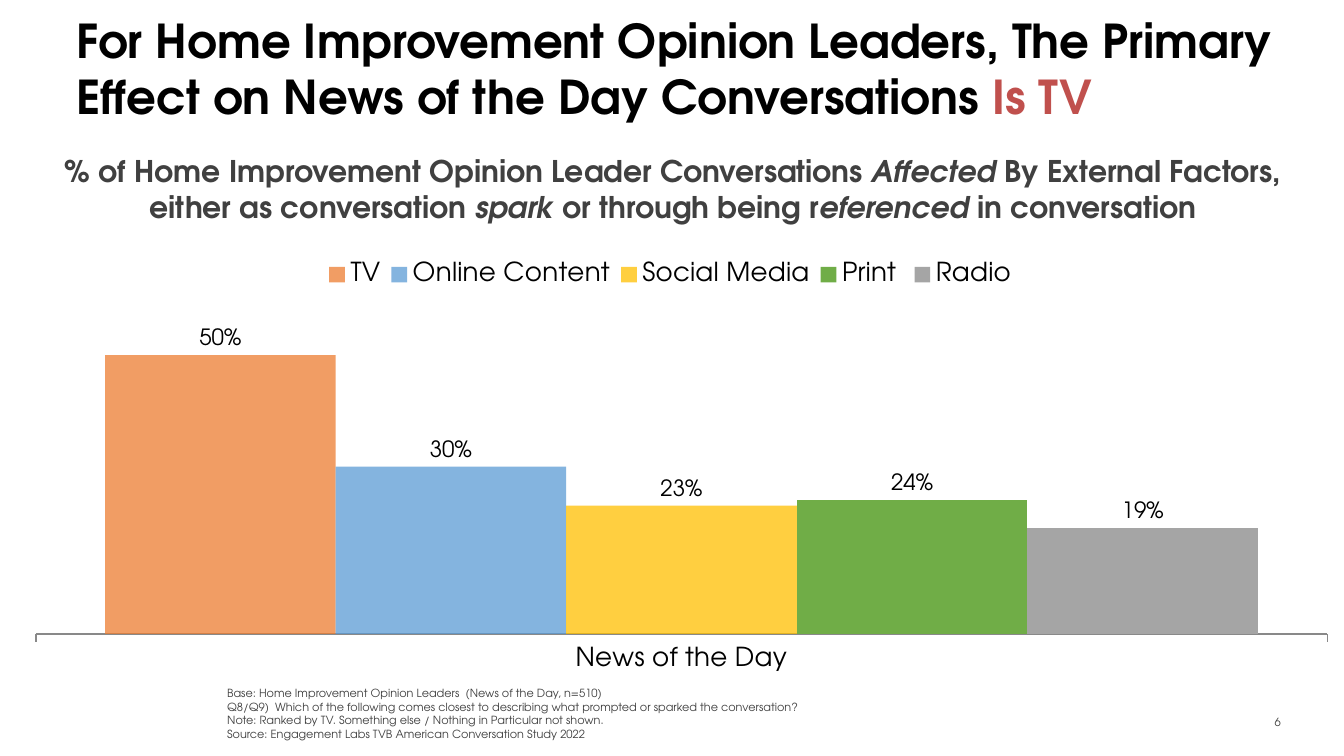
from dataclasses import dataclass, replace
from typing import Optional

from pptx import Presentation
from pptx.chart.data import CategoryChartData
from pptx.dml.color import RGBColor
from pptx.enum.chart import XL_CHART_TYPE as ChartType
from pptx.enum.chart import XL_LABEL_POSITION as LabelPosition
from pptx.enum.chart import XL_LEGEND_POSITION as LegendPosition
from pptx.enum.chart import XL_TICK_MARK as TickMark
from pptx.enum.text import MSO_ANCHOR as Anchor
from pptx.enum.text import MSO_AUTO_SIZE as AutoSize
from pptx.enum.text import PP_ALIGN as Align
from pptx.oxml import parse_xml
from pptx.oxml.ns import nsdecls, qn
from pptx.util import Emu, Pt

FONT = "TeX Gyre Adventor"
BLACK = RGBColor(0x00, 0x00, 0x00)
RED = RGBColor(0xC0, 0x50, 0x4D)
DARK_GREY = RGBColor(0x40, 0x40, 0x40)
PAGE_GREY = RGBColor(0x3C, 0x3C, 0x3A)
AXIS_GREY = RGBColor(0x89, 0x89, 0x89)
ORANGE = RGBColor(0xED, 0x7D, 0x31)
BLUE = RGBColor(0x5B, 0x9B, 0xD5)
YELLOW = RGBColor(0xFF, 0xC0, 0x00)
GREEN = RGBColor(0x70, 0xAD, 0x47)
GREY = RGBColor(0xA5, 0xA5, 0xA5)

EMU_PER_PX = 914400 / 134.4


def px(length: int) -> Emu:
    return Emu(round(length * EMU_PER_PX))


@dataclass(frozen=True)
class Run:
    text: str
    size: int
    color: RGBColor
    bold: bool = False
    italic: bool = False
    break_after: bool = False


@dataclass(frozen=True)
class TextBlock:
    left: int
    top: int
    width: int
    height: int
    paragraphs: list[list[Run]]
    align: Align = Align.LEFT
    anchor: Anchor = Anchor.TOP
    margin_top: int = 7
    wrap: bool = True
    fit: AutoSize = AutoSize.NONE


@dataclass(frozen=True)
class Medium:
    name: str
    share: float
    color: RGBColor
    opacity: Optional[int] = None


def add_text_block(slide, block: TextBlock) -> None:
    box = slide.shapes.add_textbox(
        px(block.left), px(block.top), px(block.width), px(block.height))
    frame = box.text_frame
    frame.word_wrap = block.wrap
    frame.auto_size = block.fit
    frame.vertical_anchor = block.anchor
    frame.margin_top = px(block.margin_top)
    for index, runs in enumerate(block.paragraphs):
        paragraph = frame.add_paragraph() if index else frame.paragraphs[0]
        paragraph.alignment = block.align
        for part in runs:
            run = paragraph.add_run()
            run.text = part.text
            run.font.name = FONT
            run.font.size = Pt(part.size)
            run.font.bold = part.bold
            run.font.italic = part.italic
            run.font.color.rgb = part.color
            if part.break_after:
                paragraph.add_line_break()


def manual_layout(x: float, y: float, w: float, h: float, inner: bool = False):
    target = '<c:layoutTarget val="inner"/>' if inner else ""
    return parse_xml(
        f'<c:layout {nsdecls("c")}><c:manualLayout>{target}'
        '<c:xMode val="edge"/><c:yMode val="edge"/>'
        f'<c:x val="{x}"/><c:y val="{y}"/><c:w val="{w}"/><c:h val="{h}"/>'
        '</c:manualLayout></c:layout>')


def set_layout(parent, index: int, layout) -> None:
    for old in parent.findall(qn("c:layout")):
        parent.remove(old)
    parent.insert(index, layout)


def style_series(series, medium: Medium) -> None:
    fill = series.format.fill
    fill.solid()
    fill.fore_color.rgb = medium.color
    if medium.opacity is not None:
        color = series.format.fill.fore_color
        color_element = next(series._element.iter(qn("a:srgbClr")))
        color_element.append(parse_xml(
            f'<a:alpha {nsdecls("a")} val="{medium.opacity * 1000}"/>'))
    labels = series.data_labels
    labels.show_value = True
    labels.position = LabelPosition.OUTSIDE_END
    labels.number_format = "0%"
    labels.number_format_is_linked = False
    labels.font.size = Pt(12)
    labels.font.name = FONT
    labels.font.color.rgb = BLACK


def add_media_chart(slide, media: list[Medium]) -> None:
    data = CategoryChartData(number_format="0%")
    data.categories = ["News of the Day"]
    for medium in media:
        data.add_series(medium.name, [medium.share])
    chart = slide.shapes.add_chart(
        ChartType.COLUMN_CLUSTERED, px(0), px(220), px(1328), px(476), data).chart
    chart.has_title = False
    chart.font.name = FONT
    chart.font.size = Pt(18)
    chart.font.color.rgb = BLACK

    # Columns
    plot = chart.plots[0]
    plot.gap_width = 60
    plot.overlap = 0
    plot.vary_by_categories = False
    for series, medium in zip(plot.series, media):
        style_series(series, medium)
    plot_area = next(chart._chartSpace.iter(qn("c:plotArea")))
    set_layout(plot_area, 0, manual_layout(0.027, 0.05, 0.973, 0.82, inner=True))

    # Axes
    shares = chart.value_axis
    shares.minimum_scale = 0
    shares.maximum_scale = 0.7
    shares.has_major_gridlines = False
    shares.visible = False
    topic = chart.category_axis
    topic.major_tick_mark = TickMark.OUTSIDE
    topic.tick_labels.font.size = Pt(14)
    topic.format.line.color.rgb = AXIS_GREY
    topic.format.line.width = Pt(0.75)

    # Legend
    chart.has_legend = True
    legend = chart.legend
    legend.position = LegendPosition.TOP
    legend.include_in_layout = False
    legend.font.size = Pt(14)
    set_layout(legend._element, 1, manual_layout(0.24, 0.08, 0.53, 0.07))


MEDIA = [
    Medium("TV", 0.50, ORANGE, 75),
    Medium("Online Content", 0.30, BLUE, 75),
    Medium("Social Media", 0.23, YELLOW, 75),
    Medium("Print ", 0.24, GREEN),
    Medium("Radio", 0.19, GREY),
]

HEADLINE = Run("For Home Improvement Opinion Leaders, The Primary Effect on "
               "News of the Day Conversations ", 25, BLACK, bold=True)
MEASURE = Run("% of Home Improvement Opinion Leader Conversations ",
              16, DARK_GREY, bold=True)
EMPHASIS = replace(MEASURE, italic=True)
FOOTNOTE = Run("Base: Home Improvement Opinion Leaders  (News of the Day, n=510) ",
               6, DARK_GREY, break_after=True)
NOTE = replace(FOOTNOTE, break_after=False)

TEXT_BLOCKS = [
    # Title
    TextBlock(63, 12, 1281, 126,
              [[HEADLINE, replace(HEADLINE, text="Is TV", color=RED)]], margin_top=0),
    # Chart heading
    TextBlock(34, 146, 1278, 86, [
        [MEASURE, replace(EMPHASIS, text="Affected"),
         replace(MEASURE, text=" By External Factors,")],
        [replace(MEASURE, text="either as conversation "),
         replace(EMPHASIS, text="spark"),
         replace(MEASURE, text=" or through being r"),
         replace(EMPHASIS, text="eferenced"),
         replace(MEASURE, text=" in conversation")],
    ], align=Align.CENTER, wrap=False, fit=AutoSize.SHAPE_TO_FIT_TEXT),
    # Base and source notes
    TextBlock(214, 680, 1130, 67, [
        [FOOTNOTE, replace(NOTE, text="Q8/Q9)  Which of the following comes closest to "
                           "describing what prompted or sparked the conversation?")],
        [replace(NOTE, text="Note: Ranked by TV. Something else / Nothing in "
                 "Particular not shown.")],
        [replace(NOTE, text="Source: Engagement Labs TVB American Conversation "
                 "Study 2022")],
    ], anchor=Anchor.BOTTOM, fit=AutoSize.SHAPE_TO_FIT_TEXT),
    # Page number
    TextBlock(1215, 702, 79, 40, [[Run("6", 6, PAGE_GREY)]],
              align=Align.RIGHT, anchor=Anchor.MIDDLE),
]


def main() -> None:
    deck = Presentation()
    deck.slide_width, deck.slide_height = px(1344), px(756)
    slide = deck.slides.add_slide(deck.slide_layouts[6])
    add_media_chart(slide, MEDIA)
    for block in TEXT_BLOCKS:
        add_text_block(slide, block)
    deck.save("out.pptx")


if __name__ == "__main__":
    main()
